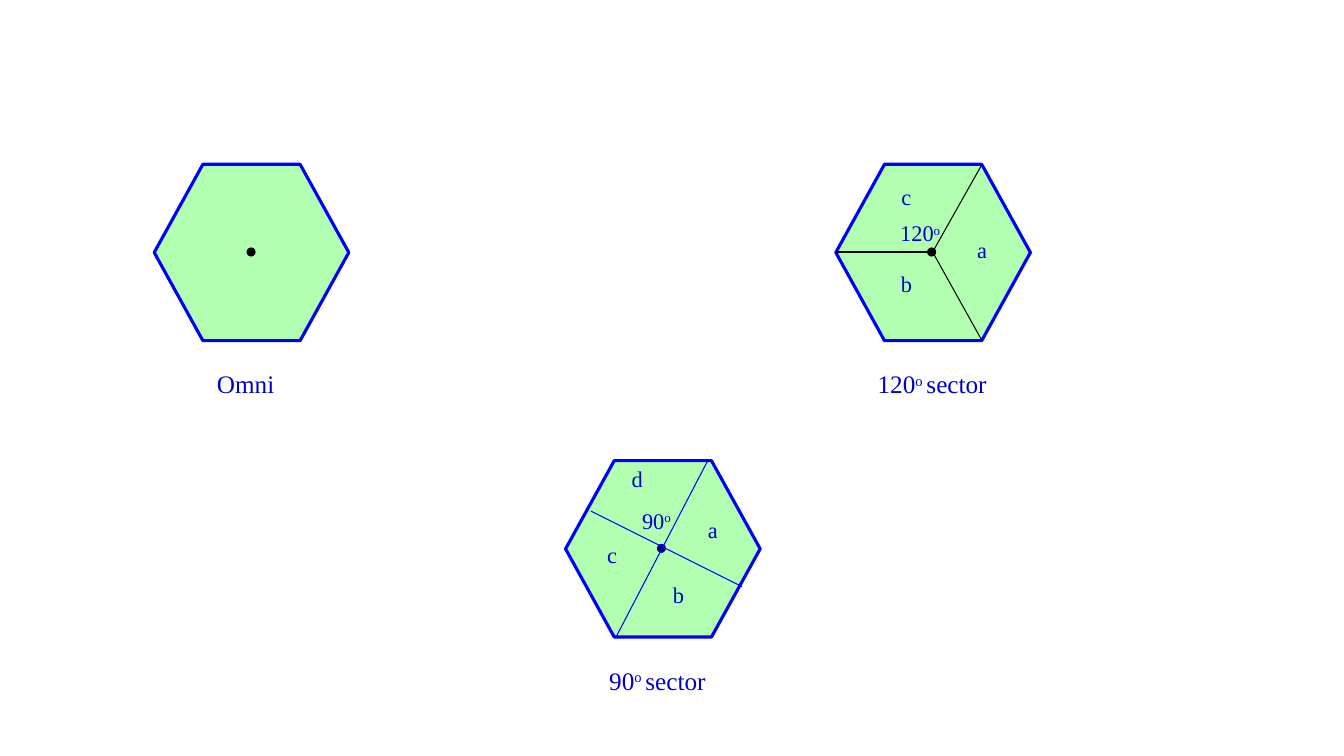
"""Build a slide of three hexagonal radio cells: omni, 120° sector and 90° sector."""
from dataclasses import dataclass

from lxml import etree
from pptx import Presentation
from pptx.dml.color import RGBColor
from pptx.enum.shapes import MSO_CONNECTOR, MSO_SHAPE
from pptx.enum.text import MSO_AUTO_SIZE, PP_ALIGN
from pptx.oxml.ns import qn
from pptx.util import Inches, Pt

HEXAGON, OVAL = MSO_SHAPE.HEXAGON, MSO_SHAPE.OVAL
STRAIGHT = MSO_CONNECTOR.STRAIGHT
CENTER, LEFT = PP_ALIGN.CENTER, PP_ALIGN.LEFT
GROW = MSO_AUTO_SIZE.SHAPE_TO_FIT_TEXT

FONT = "Times New Roman"
BLACK, BLUE, GREEN, TEXT_BLUE = "000000", "0000FF", "66FF66", "0000CC"
CELL_WIDTH, CELL_HEIGHT, DOT_SIZE = 1.93, 1.75, 0.08
LETTER_WIDTH, LETTER_HEIGHT, CAPTION_HEIGHT = 0.42, 0.37, 0.4
CAPTION_DROP = 1.98
SUPERSCRIPT_MARK = "^"


@dataclass(frozen=True)
class Label:
    text: str
    left: float
    top: float
    width: float = LETTER_WIDTH
    height: float = LETTER_HEIGHT
    size: int = 16
    align: PP_ALIGN = CENTER


@dataclass(frozen=True)
class Ray:
    start: tuple[float, float]
    end: tuple[float, float]


@dataclass(frozen=True)
class Cell:
    left: float
    top: float
    dot: tuple[float, float]
    caption: str
    caption_left: float
    caption_width: float
    line_color: str = BLACK
    rays: tuple[Ray, ...] = ()
    labels: tuple[Label, ...] = ()


CELLS = (
    Cell(1.53, 1.63, (2.45, 2.46), " Omni", 1.53, 1.75),
    Cell(
        8.29, 1.63, (9.2, 2.46), "120^o ^sector", 8.12, 2.25,
        rays=(
            Ray((9.25, 2.5), (8.29, 2.5)),
            Ray((9.25, 2.5), (9.74, 1.63)),
            Ray((9.25, 2.5), (9.74, 3.38)),
        ),
        labels=(
            Label("120^o", 8.83, 2.13, width=0.7, align=LEFT),
            Label("a", 9.53, 2.29),
            Label("b", 8.78, 2.63),
            Label("c", 8.78, 1.77),
        ),
    ),
    Cell(
        5.61, 4.57, (6.52, 5.4), "90^o ^sector", 5.52, 2,
        line_color=BLUE,
        rays=(Ray((5.86, 5.07), (7.36, 5.82)), Ray((6.11, 6.32), (7.02, 4.57))),
        labels=(
            Label("90^o", 6.27, 4.98, width=0.56, align=LEFT),
            Label("a", 6.86, 5.07),
            Label("b", 6.52, 5.72),
            Label("c", 5.86, 5.32),
            Label("d", 6.11, 4.57),
        ),
    ),
)


def set_color(color_format, color: str) -> None:
    """Apply a hex colour to a fill's, line's or font's colour."""
    color_format.rgb = RGBColor.from_string(color)


def add_filled_shape(shapes, kind, left: float, top: float, width: float,
                     height: float, fill: str, line: str, weight: float):
    """Add a preset shape with a solid fill and outline."""
    shape = shapes.add_shape(
        kind, Inches(left), Inches(top), Inches(width), Inches(height))
    shape.shadow.inherit = False
    shape.fill.solid()
    set_color(shape.fill.fore_color, fill)
    set_color(shape.line.color, line)
    shape.line.width = Pt(weight)
    return shape


def add_hexagon(shapes, cell: Cell) -> None:
    """Add the half-transparent hexagon of a cell."""
    hexagon = add_filled_shape(shapes, HEXAGON, cell.left, cell.top, CELL_WIDTH,
                               CELL_HEIGHT, GREEN, BLUE, 2.25)
    hexagon.adjustments[0] = 0.276
    fill_color = hexagon.element.spPr.find(qn("a:solidFill"))[0]
    etree.SubElement(fill_color, qn("a:alpha")).set("val", "50000")


def add_ray(shapes, ray: Ray, color: str) -> None:
    """Add a thin sector boundary."""
    points = [Inches(value) for value in ray.start + ray.end]
    connector = shapes.add_connector(STRAIGHT, *points)
    set_color(connector.line.color, color)
    connector.line.width = Pt(0.75)
    etree.SubElement(connector.element.spPr, qn("a:effectLst"))


def add_label(shapes, label: Label) -> None:
    """Add a text box, raising the pieces between superscript marks."""
    box = shapes.add_textbox(Inches(label.left), Inches(label.top),
                             Inches(label.width), Inches(label.height))
    box.text_frame.word_wrap = True
    box.text_frame.auto_size = GROW
    para = box.text_frame.paragraphs[0]
    para.alignment = label.align
    for index, piece in enumerate(label.text.split(SUPERSCRIPT_MARK)):
        span = para.add_run()
        span.text = piece
        span.font.name = FONT
        span.font.size = Pt(label.size)
        set_color(span.font.color, TEXT_BLUE)
        if index % 2:
            para.runs[-1].font._element.set("baseline", "30000")


def add_cell(page, cell: Cell) -> None:
    """Draw one cell, grouping it when it is split into sectors."""
    shapes = page.shapes.add_group_shape().shapes if cell.rays else page.shapes
    add_hexagon(shapes, cell)
    add_filled_shape(shapes, OVAL, *cell.dot, DOT_SIZE, DOT_SIZE,
                     BLACK, cell.line_color, 0.75)
    for ray in cell.rays:
        add_ray(shapes, ray, cell.line_color)
    caption = Label(cell.caption, cell.caption_left, cell.top + CAPTION_DROP,
                    cell.caption_width, CAPTION_HEIGHT, size=18)
    for label in (*cell.labels, caption):
        add_label(shapes, label)


def main() -> None:
    """Create the deck and save it."""
    deck = Presentation()
    deck.slide_width, deck.slide_height = Inches(13.33), Inches(7.5)
    page = deck.slides.add_slide(deck.slide_layouts[6])
    for cell in CELLS:
        add_cell(page, cell)
    deck.save("out.pptx")


if __name__ == "__main__":
    main()
